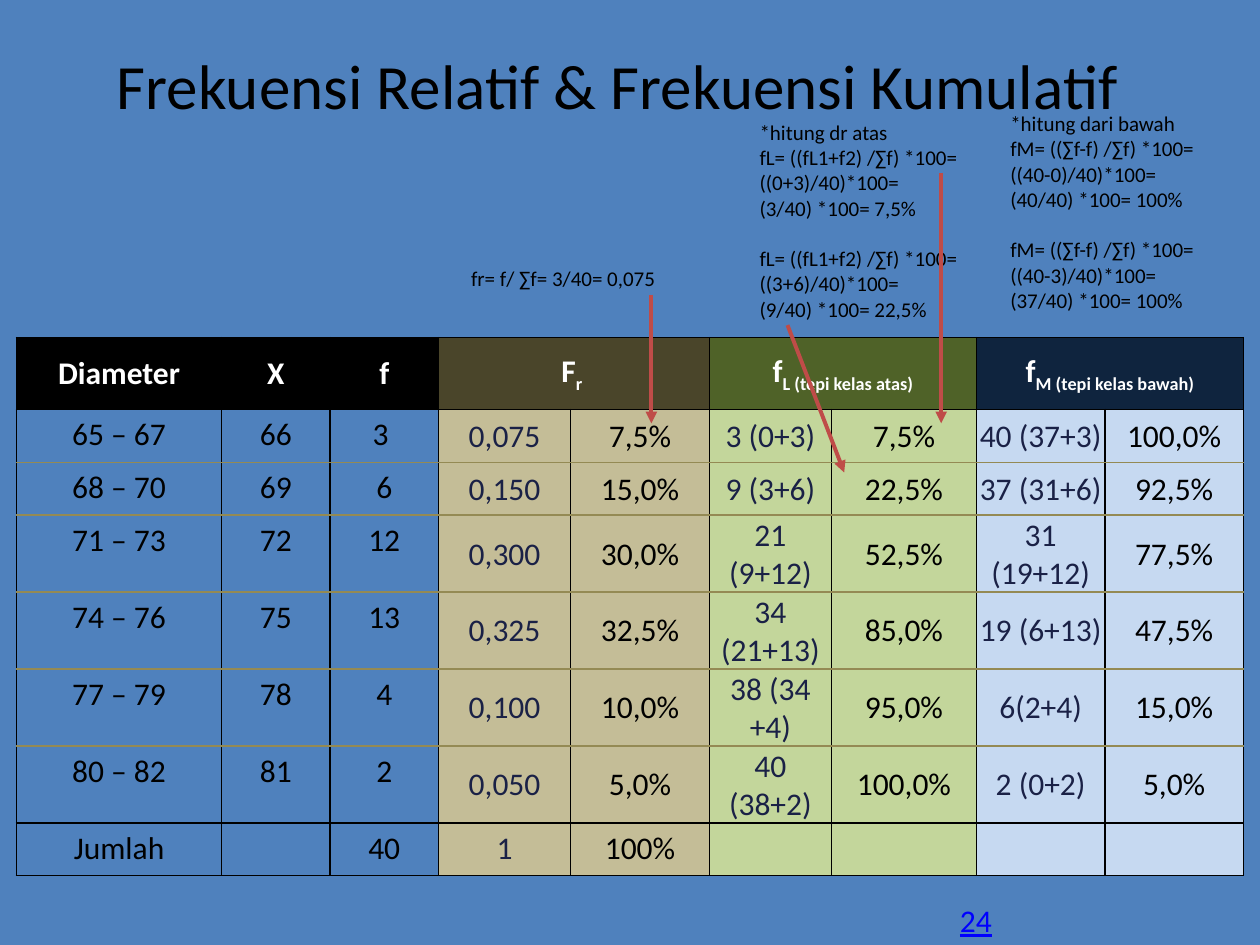
from lxml import etree
from pptx import Presentation
from pptx.dml.color import RGBColor
from pptx.enum.shapes import MSO_CONNECTOR
from pptx.enum.text import MSO_ANCHOR, MSO_AUTO_SIZE, PP_ALIGN
from pptx.oxml.ns import qn
from pptx.util import Inches, Pt

CENTER = PP_ALIGN.CENTER
TOP = MSO_ANCHOR.TOP
MIDDLE = MSO_ANCHOR.MIDDLE
NO_AUTO_SIZE = MSO_AUTO_SIZE.NONE
STRAIGHT = MSO_CONNECTOR.STRAIGHT

FONT = "Calibri"
COLORS = {
    "background": "4F81BD", "black": "000000", "white": "FFFFFF",
    "link": "0000FF", "arrow": "BF4C48", "rule": "948A54", "navy": "1A2146",
    "relative head": "4A452A", "relative": "C4BD97",
    "less head": "4F6228", "less": "C3D69B",
    "more head": "0F243E", "more": "C6D9F1",
}

COLUMN_WIDTHS = [1.63, 0.86, 0.86, 1.05, 1.1, 0.97, 1.15, 1.02, 1.1]
COLUMN_GROUPS = [None] * 3 + ["relative"] * 2 + ["less"] * 2 + ["more"] * 2
HEADER_HEIGHT = 0.57
ROW_HEIGHT = 0.42
HEADERS = {
    0: ("Diameter", ""), 1: ("X", ""), 2: ("f", ""), 3: ("F", "r "),
    5: ("f", "L (tepi kelas atas)"), 7: ("f", "M (tepi kelas bawah)"),
}
ROWS = [
    ["65 – 67", "66", "3 ", "0,075", "7,5%", "3 (0+3)", "7,5%", "40 (37+3)", "100,0%"],
    ["68 – 70", "69", "6", "0,150", "15,0%", "9 (3+6)", "22,5%", "37 (31+6)", "92,5%"],
    ["71 – 73", "72", "12", "0,300", "30,0%", "21 (9+12)", "52,5%", "31 (19+12)", "77,5%"],
    ["74 – 76", "75", "13", "0,325", "32,5%", "34 (21+13)", "85,0%", "19 (6+13)", "47,5%"],
    ["77 – 79", "78", "4", "0,100", "10,0%", "38 (34 +4)", "95,0%", "6(2+4)", "15,0%"],
    ["80 – 82", "81", "2", "0,050", "5,0%", "40 (38+2)", "100,0%", "2 (0+2)", "5,0%"],
    ["Jumlah", "", "40", "1", "100%", "", "", "", ""],
]
TOTAL_ROW = len(ROWS)

NOTES = [
    (3.64, 2.06, 0.3, ["fr= f/ ∑f= 3/40= 0,075"]),
    (5.93, 0.9, 1.92, [
        "*hitung dr atas",
        "fL= ((fL1+f2) /∑f) *100= ((0+3)/40)*100=",
        "(3/40) *100= 7,5%",
        "fL= ((fL1+f2) /∑f) *100= ((3+6)/40)*100=",
        "(9/40) *100= 22,5%",
    ]),
    (7.92, 0.83, 1.92, [
        "*hitung dari bawah",
        "fM= ((∑f-f) /∑f) *100= ((40-0)/40)*100=",
        "(40/40) *100= 100%",
        "fM= ((∑f-f) /∑f) *100= ((40-3)/40)*100=",
        "(37/40) *100= 100%",
    ]),
]
SECOND_EXAMPLE = 3
ARROWS = [(5.17, 2.34, 5.17, 3.36), (7.47, 1.37, 7.47, 3.36), (6.25, 2.58, 6.7, 3.75)]


def color(name):
    return RGBColor.from_string(COLORS[name])


def format_font(font, size, color_name, bold=False):
    font.name = FONT
    font.size = Pt(size)
    font.bold = bold
    font.color.rgb = color(color_name)


def add_title(slide, text):
    title = slide.shapes.title
    title.left, title.top = Inches(0.65), Inches(0.32)
    title.width, title.height = Inches(8.5), Inches(1.25)
    text_frame = title.text_frame
    text_frame.text = text
    text_frame.auto_size = NO_AUTO_SIZE
    text_frame.vertical_anchor = TOP
    paragraph = text_frame.paragraphs[0]
    paragraph.alignment = CENTER
    format_font(paragraph.runs[0].font, 36, "black")


def add_text(slide, left, top, width, height, lines, size, color_name, wrap=True):
    shape = slide.shapes.add_textbox(Inches(left), Inches(top), Inches(width), Inches(height))
    text_frame = shape.text_frame
    text_frame.word_wrap = wrap
    text_frame.text = "\n".join(lines)
    for paragraph in text_frame.paragraphs:
        format_font(paragraph.runs[0].font, size, color_name)
    return text_frame


def add_note(slide, left, top, height, lines):
    text_frame = add_text(slide, left, top, 1.83, height, lines, 12, "black")
    if len(lines) > SECOND_EXAMPLE:
        text_frame.paragraphs[SECOND_EXAMPLE].space_before = Pt(14.5)


def add_page_number(slide, number):
    text_frame = add_text(slide, 7.52, 7.1, 0.46, 0.4, [number], 18, "link", wrap=False)
    text_frame.paragraphs[0].runs[0].font.underline = True


def add_arrow(slide, start_x, start_y, end_x, end_y):
    arrow = slide.shapes.add_connector(
        STRAIGHT, Inches(start_x), Inches(start_y), Inches(end_x), Inches(end_y))
    arrow.line.color.rgb = color("arrow")
    arrow.line.width = Pt(2.25)
    etree.SubElement(arrow.line._get_or_add_ln(), qn("a:tailEnd"), type="triangle")
    etree.SubElement(arrow._element.spPr, qn("a:effectLst"))


def set_borders(cell, top, bottom):
    properties = cell._tc.get_or_add_tcPr()
    sides = {"L": "black", "R": "black", "T": top, "B": bottom}
    for index, (side, color_name) in enumerate(sides.items()):
        line = etree.Element(qn(f"a:ln{side}"), w=str(Pt(1)))
        fill = etree.SubElement(line, qn("a:solidFill"))
        etree.SubElement(fill, qn("a:srgbClr"), val=COLORS[color_name])
        properties.insert(index, line)


def set_fill(cell, color_name):
    if color_name is None:
        cell.fill.background()
    else:
        cell.fill.solid()
        cell.fill.fore_color.rgb = color(color_name)


def fill_header(table):
    for column, group in enumerate(COLUMN_GROUPS):
        cell = table.cell(0, column)
        set_fill(cell, f"{group} head" if group else "black")
        set_borders(cell, "black", "black")
        if column not in HEADERS:
            table.cell(0, column - 1).merge(cell)
            continue
        symbol, subscript = HEADERS[column]
        cell.vertical_anchor = MIDDLE
        paragraph = cell.text_frame.paragraphs[0]
        paragraph.text = symbol
        paragraph.alignment = CENTER
        if subscript:
            run = paragraph.add_run()
            run.text = subscript
            run._r.get_or_add_rPr().set("baseline", "-25000")
        for run in paragraph.runs:
            format_font(run.font, 18, "white", bold=True)


def fill_body_cell(cell, row, column, text):
    group = COLUMN_GROUPS[column]
    set_fill(cell, group)
    set_borders(cell, "black" if row in (1, TOTAL_ROW) else "rule",
                "black" if row >= TOTAL_ROW - 1 else "rule")
    if group and row < TOTAL_ROW:
        cell.vertical_anchor = MIDDLE
        cell.margin_left = cell.margin_right = cell.margin_top = Inches(0.01)
        cell.margin_bottom = 0
    paragraph = cell.text_frame.paragraphs[0]
    paragraph.text = text
    paragraph.alignment = CENTER
    for run in paragraph.runs:
        format_font(run.font, 18, "navy" if group and column % 2 else "black")


def add_frequency_table(slide):
    table = slide.shapes.add_table(
        len(ROWS) + 1, len(COLUMN_WIDTHS), Inches(0.13), Inches(2.68),
        Inches(sum(COLUMN_WIDTHS)), Inches(HEADER_HEIGHT + ROW_HEIGHT * len(ROWS))).table
    table.first_row = table.horz_banding = False
    for column, width in zip(table.columns, COLUMN_WIDTHS):
        column.width = Inches(width)
    for index, row in enumerate(table.rows):
        row.height = Inches(ROW_HEIGHT if index else HEADER_HEIGHT)
    fill_header(table)
    for row, values in enumerate(ROWS, start=1):
        for column, text in enumerate(values):
            fill_body_cell(table.cell(row, column), row, column, text)


def main():
    presentation = Presentation()
    presentation.slide_width, presentation.slide_height = Inches(10), Inches(7.5)
    slide = presentation.slides.add_slide(presentation.slide_layouts[5])
    slide.background.fill.solid()
    slide.background.fill.fore_color.rgb = color("background")
    add_page_number(slide, "24")
    add_title(slide, "Frekuensi Relatif & Frekuensi Kumulatif")
    add_frequency_table(slide)
    for note in NOTES:
        add_note(slide, *note)
    for arrow in ARROWS:
        add_arrow(slide, *arrow)
    presentation.save("out.pptx")


if __name__ == "__main__":
    main()
